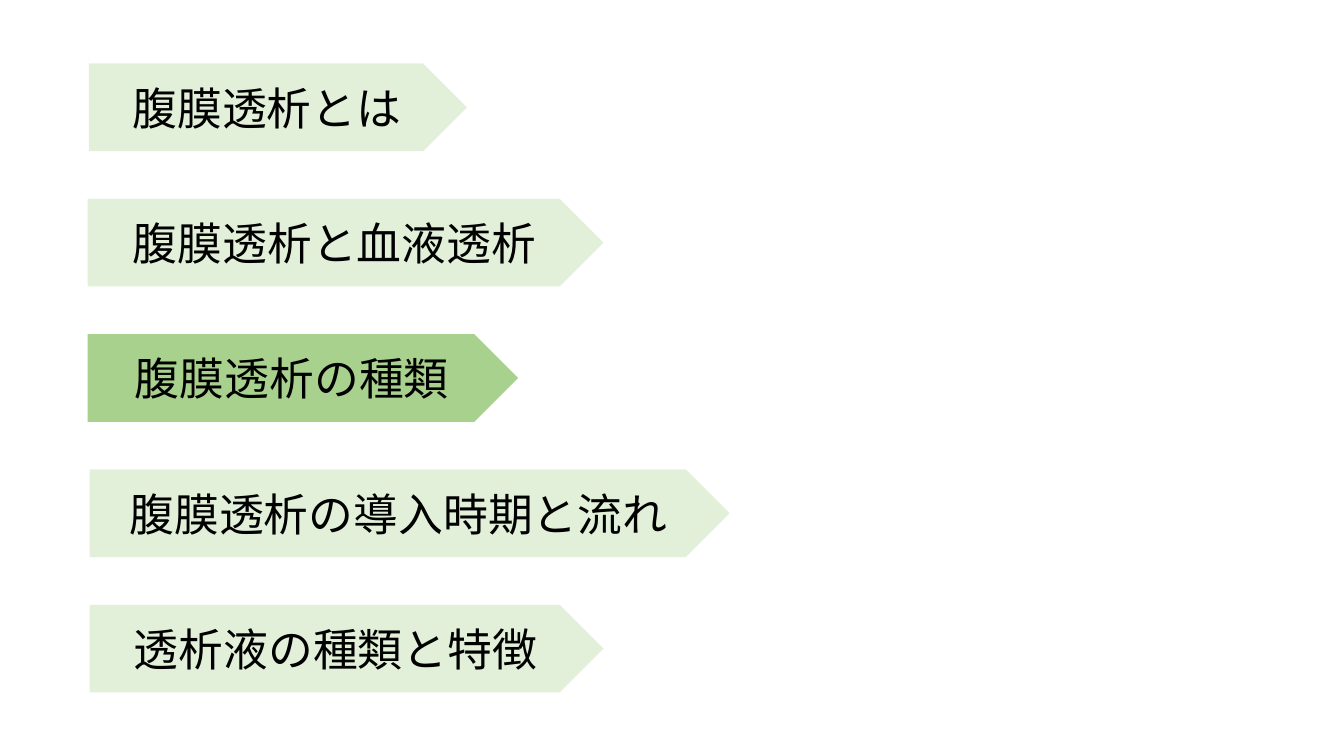
from lxml import etree
from pptx import Presentation
from pptx import util as u
from pptx.dml.color import RGBColor
from pptx.enum import shapes, text
from pptx.oxml import ns

# Chapters: title, left and width in cm
CHAPTERS = [
    ("腹膜透析とは", 2.24, 9.53),
    ("腹膜透析と血液透析", 2.21, 13),
    ("腹膜透析の種類", 2.21, 10.85),
    ("腹膜透析の導入時期と流れ", 2.26, 16.13),
    ("透析液の種類と特徴", 2.26, 12.95),
]
CURRENT_CHAPTER = "腹膜透析の種類"
FIRST_TOP, PITCH, HEIGHT = 1.6, 3.41, 2.21


def color(hex_string):
    return RGBColor.from_string(hex_string)


class AgendaSlide:
    font_name = "Noto Sans CJK JP"
    font_size = 32
    text_color = "000000"
    plain_fill = "E2F0D9"
    current_fill = "A9D18E"

    def __init__(self, presentation):
        self.slide = presentation.slides.add_slide(presentation.slide_layouts[6])

    def banner(self, title, left, top, width, height, is_current):
        shape = self.slide.shapes.add_shape(
            shapes.MSO_SHAPE.PENTAGON,
            u.Cm(left), u.Cm(top), u.Cm(width), u.Cm(height))
        shape.shadow.inherit = False
        shape.fill.solid()
        shape.fill.fore_color.rgb = color(
            self.current_fill if is_current else self.plain_fill)
        shape.line.fill.background()
        self.label(shape, title)

    def label(self, shape, title):
        frame = shape.text_frame
        frame.text = title
        frame.word_wrap = True
        frame.vertical_anchor = text.MSO_ANCHOR.MIDDLE
        paragraph = frame.paragraphs[0]
        paragraph.alignment = text.PP_ALIGN.CENTER
        font = paragraph.runs[0].font
        font.size = u.Pt(self.font_size)
        font.color.rgb = color(self.text_color)
        font.name = self.font_name
        # Japanese glyphs take the East Asian typeface
        latin = paragraph.runs[0].font._element.find(ns.qn("a:latin"))
        east_asian = etree.Element(ns.qn("a:ea"), typeface=self.font_name)
        latin.addnext(east_asian)


def main():
    presentation = Presentation()
    presentation.slide_width = u.Cm(33.87)
    presentation.slide_height = u.Cm(19.05)
    agenda = AgendaSlide(presentation)

    # Evenly spaced banners, the current chapter in a darker green
    for row, (title, left, width) in enumerate(CHAPTERS):
        agenda.banner(title, left, FIRST_TOP + row * PITCH, width, HEIGHT,
                      title == CURRENT_CHAPTER)

    presentation.save("out.pptx")


if __name__ == "__main__":
    main()
